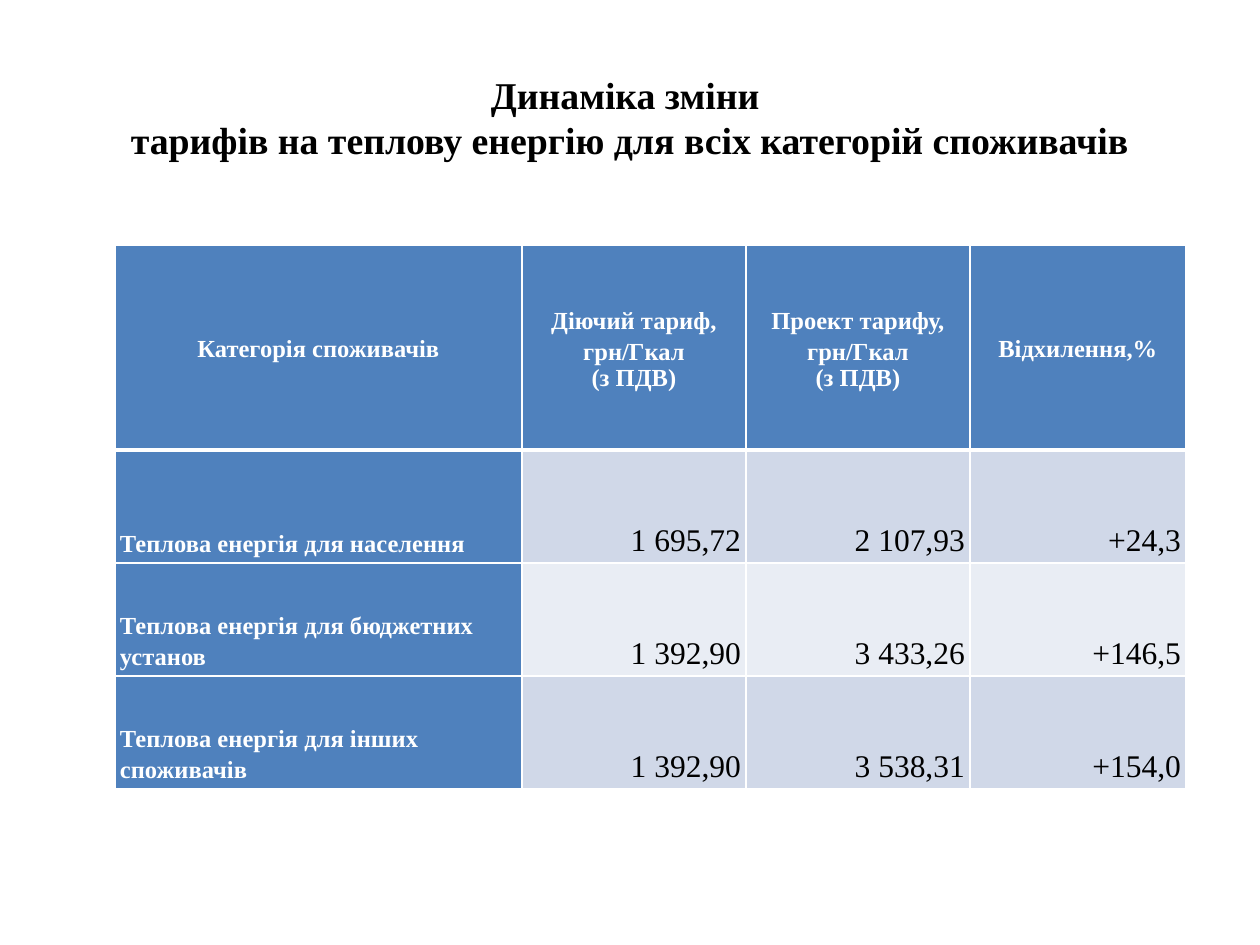
from lxml import etree
from pptx import Presentation
from pptx.dml.color import RGBColor
from pptx.enum.text import MSO_ANCHOR, PP_ALIGN
from pptx.oxml.ns import qn
from pptx.util import Emu, Pt

LEFT, CENTER, RIGHT = PP_ALIGN.LEFT, PP_ALIGN.CENTER, PP_ALIGN.RIGHT
MIDDLE, BOTTOM = MSO_ANCHOR.MIDDLE, MSO_ANCHOR.BOTTOM

EMU_PER_PX = 914400 // 126
FONT = "Times New Roman"
WHITE, BLACK, BLUE = "FFFFFF", "000000", "4F81BD"
BANDS = ("D0D8E8", "E9EDF4")

TITLE = "Динаміка зміни \vтарифів на теплову енергію для всіх категорій споживачів"
COLUMNS = (407, 224, 224, 216)
ROWS = (205, 113, 113, 113)
DATA = (
    ("Категорія споживачів", "Діючий тариф, грн/Гкал\n(з ПДВ)",
     "Проект тарифу, грн/Гкал\n(з ПДВ)", "Відхилення,%"),
    ("Теплова енергія для населення", "1 695,72", "2 107,93", "+24,3"),
    ("Теплова енергія для бюджетних установ", "1 392,90", "3 433,26", "+146,5"),
    ("Теплова енергія для інших споживачів", "1 392,90", "3 538,31", "+154,0"),
)

LABEL = {"size": Pt(14), "bold": True}
VALUE = {"size": Pt(18), "bold": False}
HEADING = {"size": Pt(21.6), "bold": True}


def px(n):
    return Emu(n * EMU_PER_PX)


def rgb(color):
    return RGBColor.from_string(color)


def set_attrs(obj, values):
    for name, value in values.items():
        setattr(obj, name, value)


def write(tf, text, font, color, align, spacings):
    """Fill a text frame, one paragraph for each line of text."""
    tf.text = text
    for p, spacing in zip(tf.paragraphs, spacings):
        set_attrs(p, {"alignment": align, "line_spacing": spacing})
        for r in p.runs:
            set_attrs(r.font, {"name": FONT, **font})
            r.font.color.rgb = rgb(color)


def add_title(s):
    sp = s.shapes.add_textbox(px(63), px(38), px(1134), px(158))
    tf = sp.text_frame
    set_attrs(tf, {"word_wrap": True, "vertical_anchor": MIDDLE})
    write(tf, TITLE, HEADING, BLACK, CENTER, (1.0,))


def set_borders(cell, widths):
    """Draw white borders; widths in points run left, right, top, bottom."""
    tc_pr = cell._tc.get_or_add_tcPr()
    for side, width in zip("LRTB", widths):
        ln = etree.SubElement(tc_pr, qn(f"a:ln{side}"), w=str(Pt(width)))
        fill = etree.SubElement(ln, qn("a:solidFill"))
        etree.SubElement(fill, qn("a:srgbClr"), val=WHITE)


def format_cell(cell, row, col, text):
    header, label = row == 0, row == 0 or col == 0
    margins = {f"margin_{side}": px(5) for side in ("left", "right", "top", "bottom")}
    set_attrs(cell, {"vertical_anchor": MIDDLE if header else BOTTOM, **margins})
    set_borders(cell, (1, 1, 3 if row == 1 else 1, 3 if header else 1))
    cell.fill.solid()
    cell.fill.fore_color.rgb = rgb(BLUE if label else BANDS[(row - 1) % 2])
    align = CENTER if header else LEFT if label else RIGHT
    write(cell.text_frame, text, LABEL if label else VALUE,
          WHITE if label else BLACK, align, (1.15, Pt(15)))


def add_tariff_table(s):
    frame = s.shapes.add_table(len(ROWS), len(COLUMNS), px(115), px(245),
                               px(sum(COLUMNS)), px(sum(ROWS)))
    table = frame.table
    for column, width in zip(table.columns, COLUMNS):
        column.width = px(width)
    for row, height in zip(table.rows, ROWS):
        row.height = px(height)
    for i, texts in enumerate(DATA):
        for j, text in enumerate(texts):
            format_cell(table.cell(i, j), i, j, text)


def main():
    prs = Presentation()
    set_attrs(prs, {"slide_width": px(1260), "slide_height": px(945)})
    s = prs.slides.add_slide(prs.slide_layouts[6])
    add_tariff_table(s)
    add_title(s)
    prs.save("out.pptx")


if __name__ == "__main__":
    main()
